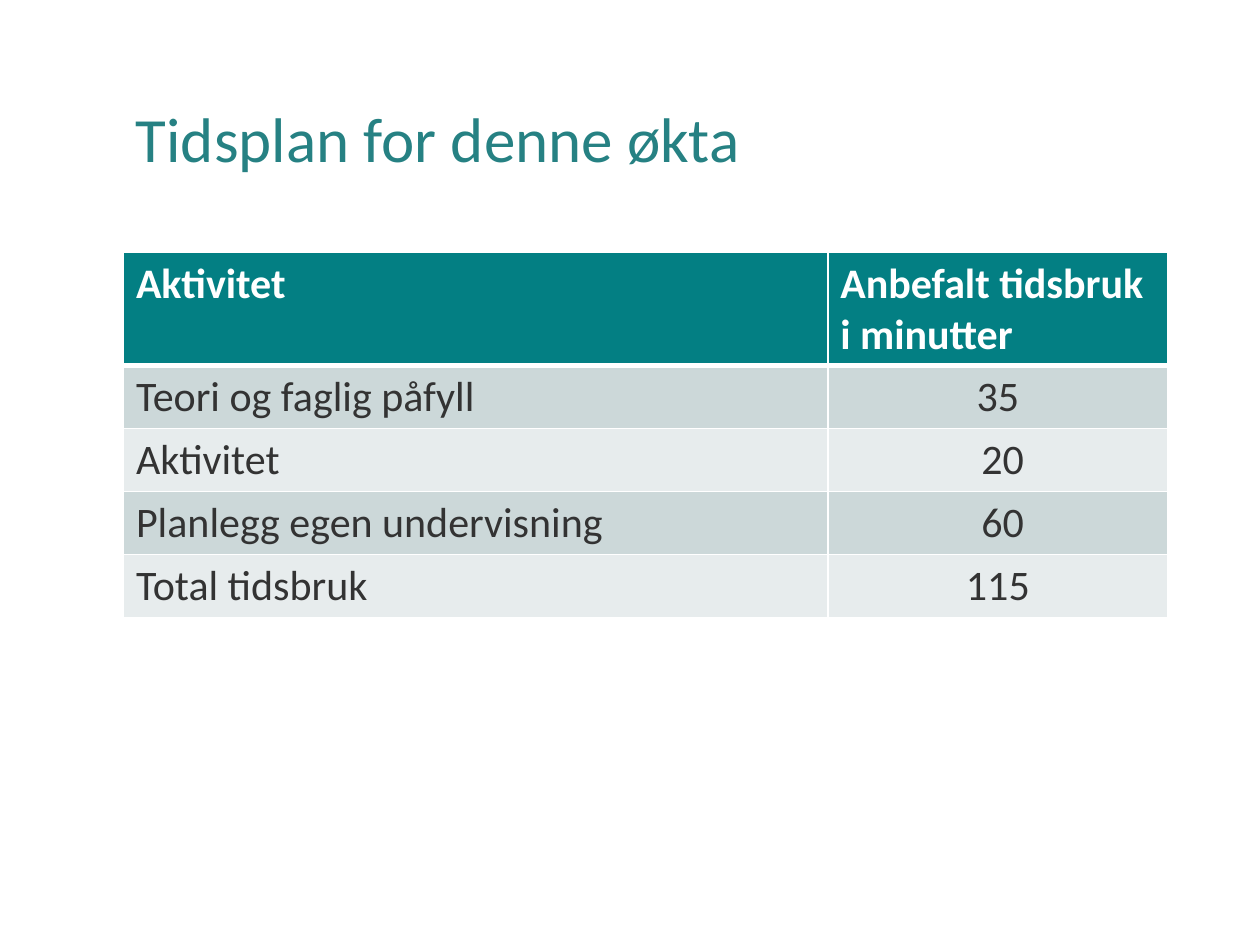
from lxml.etree import SubElement
from pptx import Presentation
from pptx.dml.color import RGBColor
from pptx.enum.text import MSO_ANCHOR, PP_ALIGN
from pptx.oxml.ns import qn
from pptx.util import Inches, Pt

FONT = "Calibri"
WHITE = "FFFFFF"
TITLE_TEAL = "268183"
HEADER_TEAL = "037F83"
BODY_INK = "333333"
BANDS = ("CCD8D9", "E7ECED")

HEADINGS = ("Aktivitet", "Anbefalt tidsbruk i minutter")
ACTIVITIES = (
    ("Teori og faglig påfyll", "35"),
    ("Aktivitet", " 20"),
    ("Planlegg egen undervisning", " 60"),
    ("Total tidsbruk", "115"),
)


def rgb(hex_color):
    """Turn a hex string into a colour."""
    return RGBColor.from_string(hex_color)


def add_run(paragraph, text, size, color, bold=False):
    """Add one formatted run to a paragraph."""
    run = paragraph.add_run()
    run.text = text
    run.font.name = FONT
    run.font.size = Pt(size)
    run.font.bold = bold
    run.font.color.rgb = rgb(color)


def set_borders(cell, widths):
    """Draw white borders with a width in points for each side."""
    properties = cell._tc.get_or_add_tcPr()
    for side, width in widths.items():
        border = SubElement(properties, qn(f"a:ln{side}"), w=str(Pt(width)))
        fill = SubElement(border, qn("a:solidFill"))
        SubElement(fill, qn("a:srgbClr"), val=WHITE)


def add_title(slide, left, top, width, height):
    """Place the slide title in the given box."""
    frame = slide.shapes.add_textbox(left, top, width, height).text_frame
    frame.word_wrap = True
    frame.vertical_anchor = MSO_ANCHOR.MIDDLE
    heading = frame.paragraphs[0]
    heading.line_spacing = 0.9
    add_run(heading, "Tidsplan for denne økta", 36, TITLE_TEAL)


def add_schedule(slide, left, top, width, height):
    """Place the table of activities and minutes in the given box."""
    rows = (HEADINGS, *ACTIVITIES)
    schedule = slide.shapes.add_table(
        len(rows), len(HEADINGS), left, top, width, height
    ).table
    minutes_width = Inches(2.7)
    schedule.columns[0].width = width - minutes_width
    schedule.columns[1].width = minutes_width
    header_height = Inches(0.9)
    for r, texts in enumerate(rows):
        is_header = r == 0
        schedule.rows[r].height = (
            header_height if is_header
            else (height - header_height) // len(ACTIVITIES)
        )
        for c, text in enumerate(texts):
            cell = schedule.cell(r, c)
            set_borders(cell, {
                "L": 1, "R": 1,
                "T": 3 if r == 1 else 1,
                "B": 3 if is_header else 1,
            })
            cell.fill.solid()
            cell.fill.fore_color.rgb = rgb(
                HEADER_TEAL if is_header else BANDS[(r - 1) % 2]
            )
            entry = cell.text_frame.paragraphs[0]
            if c == 1 and not is_header:
                entry.alignment = PP_ALIGN.CENTER
            add_run(entry, text, 24, WHITE if is_header else BODY_INK, is_header)


def main():
    """Build the schedule slide and save it."""
    deck = Presentation()
    deck.slide_width = Inches(10)
    deck.slide_height = Inches(7.5)
    slide = deck.slides.add_slide(deck.slide_layouts[6])
    left, width = Inches(0.98), Inches(8.29)
    add_title(slide, left, Inches(0.4), width, Inches(1.45))
    add_schedule(slide, left, Inches(2), width, Inches(2.9))
    deck.save("out.pptx")


if __name__ == "__main__":
    main()
